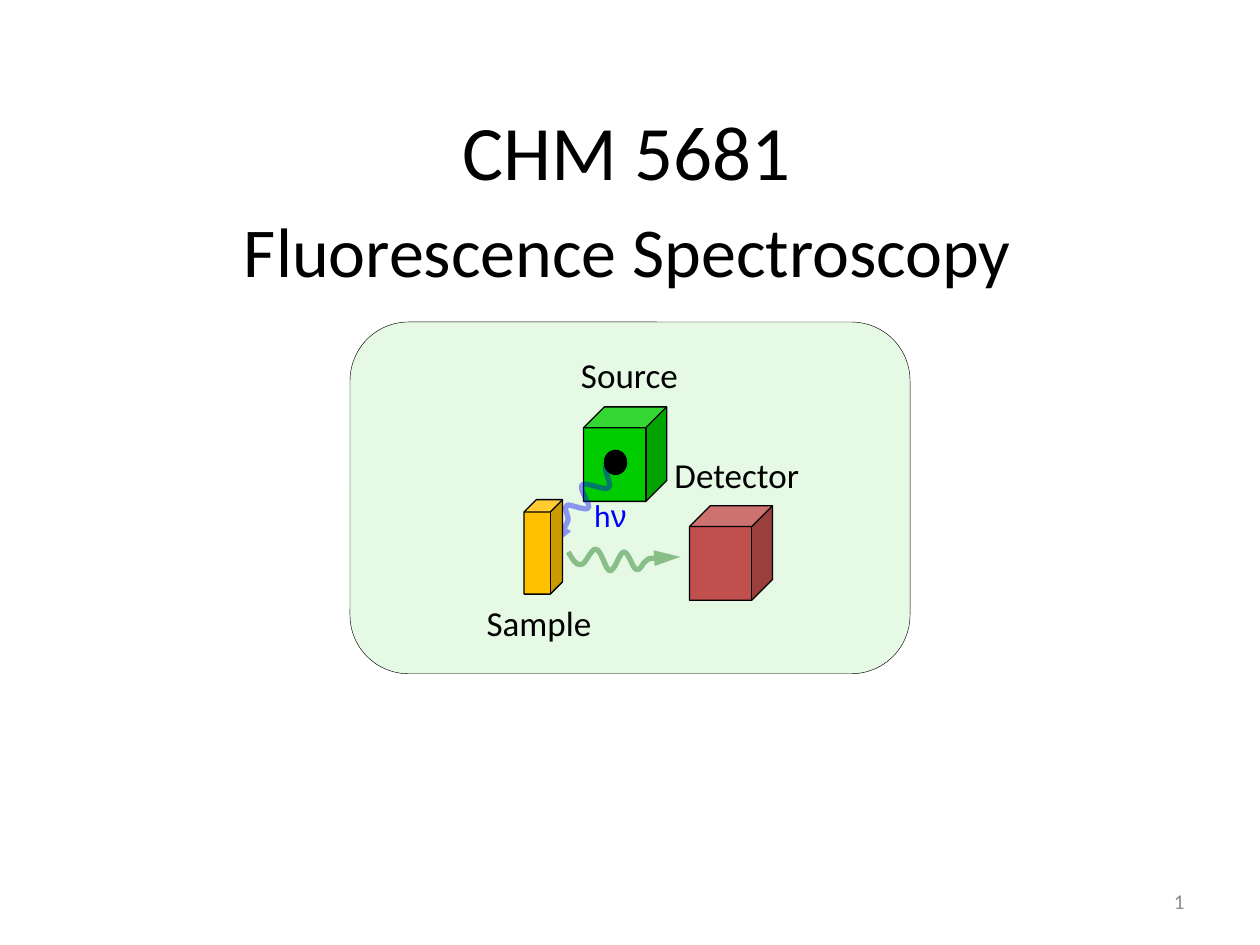
from collections import namedtuple
from lxml.etree import SubElement
from pptx import Presentation
from pptx.dml.color import RGBColor
from pptx.enum.shapes import MSO_SHAPE
from pptx.enum.text import MSO_ANCHOR, PP_ALIGN
from pptx.oxml.ns import qn
from pptx.util import Pt

Theme = namedtuple("Theme", "black grey blue dark_green green red gold "
                            "title subtitle label photon number font symbol_font")
theme = Theme(black="000000", grey="8C8C8C", blue="0000FF", dark_green="006600",
              green="00CC00", red="C0504D", gold="FFC000",
              title=44, subtitle=40, label=20, photon=18, number=12,
              font="Calibri", symbol_font="Arial")

deck = Presentation()
deck.slide_width, deck.slide_height = Pt(720), Pt(540)
page = deck.slides.add_slide(deck.slide_layouts[6])


def add_text(text, left, top, width, height, size=theme.label, color=theme.black,
             align=PP_ALIGN.CENTER, anchor=MSO_ANCHOR.TOP, wrap=True):
    """Add a text box and return its paragraph."""
    box = page.shapes.add_textbox(Pt(left), Pt(top), Pt(width), Pt(height))
    frame = box.text_frame
    frame.word_wrap = wrap
    frame.vertical_anchor = anchor
    para = frame.paragraphs[0]
    para.alignment = align
    span = para.add_run()
    span.text = text
    span.font.size = Pt(size)
    span.font.name = theme.font
    span.font.color.rgb = RGBColor.from_string(color)
    return para


def add_part(kind, left, top, width, height, color, line_width=None, opacity=100):
    """Add a filled preset shape, outlined in black if a line width is given."""
    part = page.shapes.add_shape(kind, Pt(left), Pt(top), Pt(width), Pt(height))
    part.shadow.inherit = False
    part.fill.solid()
    part.fill.fore_color.rgb = RGBColor.from_string(color)
    if opacity < 100:
        fill_color = part.fill._xPr.find(qn("a:solidFill"))[0]
        SubElement(fill_color, qn("a:alpha"), val=str(opacity * 1000))
    if line_width is None:
        part.line.fill.background()
    else:
        part.line.color.rgb = RGBColor.from_string(theme.black)
        part.line.width = Pt(line_width)
    return part


# Headings and slide number
add_text("CHM 5681", 52, 27.5, 612, 116, size=theme.title, anchor=MSO_ANCHOR.MIDDLE)
add_text("Fluorescence Spectroscopy", 106.5, 115, 504, 94, size=theme.subtitle)
add_text("1", 516, 500.5, 168, 29, size=theme.number, color=theme.grey,
         align=PP_ALIGN.RIGHT, anchor=MSO_ANCHOR.MIDDLE)

# Panel, light source and detector
add_part(MSO_SHAPE.ROUNDED_RECTANGLE, 200, 184, 320, 201, theme.green,
         line_width=0.25, opacity=10)
add_part(MSO_SHAPE.CUBE, 333.5, 232.5, 47.5, 54, theme.green, line_width=0)
add_part(MSO_SHAPE.CUBE, 394, 289, 47.5, 54, theme.red, line_width=0)

# Labels
for text, left, top, width in [("Source", 319.5, 198.5, 80.5),
                               ("Sample", 260.5, 340, 95),
                               ("Detector", 366, 255.5, 110)]:
    add_text(text, left, top, width, 31.5)
photon = add_text("h", 332.5, 280, 36, 29, size=theme.photon, color=theme.blue,
                  align=PP_ALIGN.LEFT, wrap=False)
nu = photon.add_run()
nu.text = "ν"
nu.font.size = Pt(theme.photon)
nu.font.name = theme.symbol_font
nu.font.color.rgb = RGBColor.from_string(theme.blue)

# Light waves: a start point, then three points for each Bezier curve
excitation = [
    (313.9, 313.2),
    (313.9, 313.2), (321.1, 303.1), (323.3, 300.2),
    (324.7, 297.4), (324, 298.8), (324.7, 296.6),
    (324.7, 294.5), (321.8, 290.2), (324, 288.7),
    (326.2, 288), (334.8, 292.3), (336.2, 290.2),
    (337.7, 288), (330.5, 279.4), (332.6, 277.2),
    (334.8, 275), (345.6, 280.8), (347.8, 278.6),
    (349.9, 277.2), (344.9, 268.6), (346.3, 266.4),
    (347.8, 264.2), (352.1, 264.2), (356.4, 265)]
emission = [
    (388.8, 318.2),
    (388.8, 318.2), (375.8, 319), (373, 319),
    (369.4, 319.7), (370.8, 319), (369.4, 320.4),
    (367.2, 321.1), (365.8, 326.9), (363.6, 325.4),
    (361.4, 324.7), (359.3, 315.4), (356.4, 315.4),
    (354.2, 315.4), (351.4, 326.2), (348.5, 326.2),
    (346.3, 326.2), (343.4, 313.9), (340.6, 313.9),
    (337.7, 313.2), (334.8, 322.6), (331.9, 322.6),
    (329, 323.3), (326.9, 319), (324.7, 315.4)]
for points, color in [(excitation, theme.blue), (emission, theme.dark_green)]:
    (start_x, start_y), *curve_points = [(Pt(x), Pt(y)) for x, y in points]
    builder = page.shapes.build_freeform(start_x, start_y)
    builder.add_line_segments(curve_points, close=False)
    wave = builder.convert_to_shape()
    wave.shadow.inherit = False
    wave.fill.background()
    wave.line.color.rgb = RGBColor.from_string(color)
    wave.line.width = Pt(3)
    # Turn each three line segments into one curve
    outline = next(wave._element.iter(qn("a:path")))
    segments = outline.findall(qn("a:lnTo"))
    for first in range(0, len(segments), 3):
        curve = SubElement(outline, qn("a:cubicBezTo"))
        for segment in segments[first:first + 3]:
            curve.append(segment[0])
            outline.remove(segment)
    # Transparency and arrowhead
    line = wave.line._get_or_add_ln()
    SubElement(line.find(qn("a:solidFill"))[0], qn("a:alpha"), val="40000")
    SubElement(line, qn("a:headEnd"), type="triangle", w="med", len="lg")

# Source opening and sample
add_part(MSO_SHAPE.OVAL, 345, 257, 13.5, 14.5, theme.black)
sample = add_part(MSO_SHAPE.CUBE, 299.5, 285.5, 22, 54, theme.gold, line_width=0)
sample.adjustments[0] = 0.32

deck.save("out.pptx")
